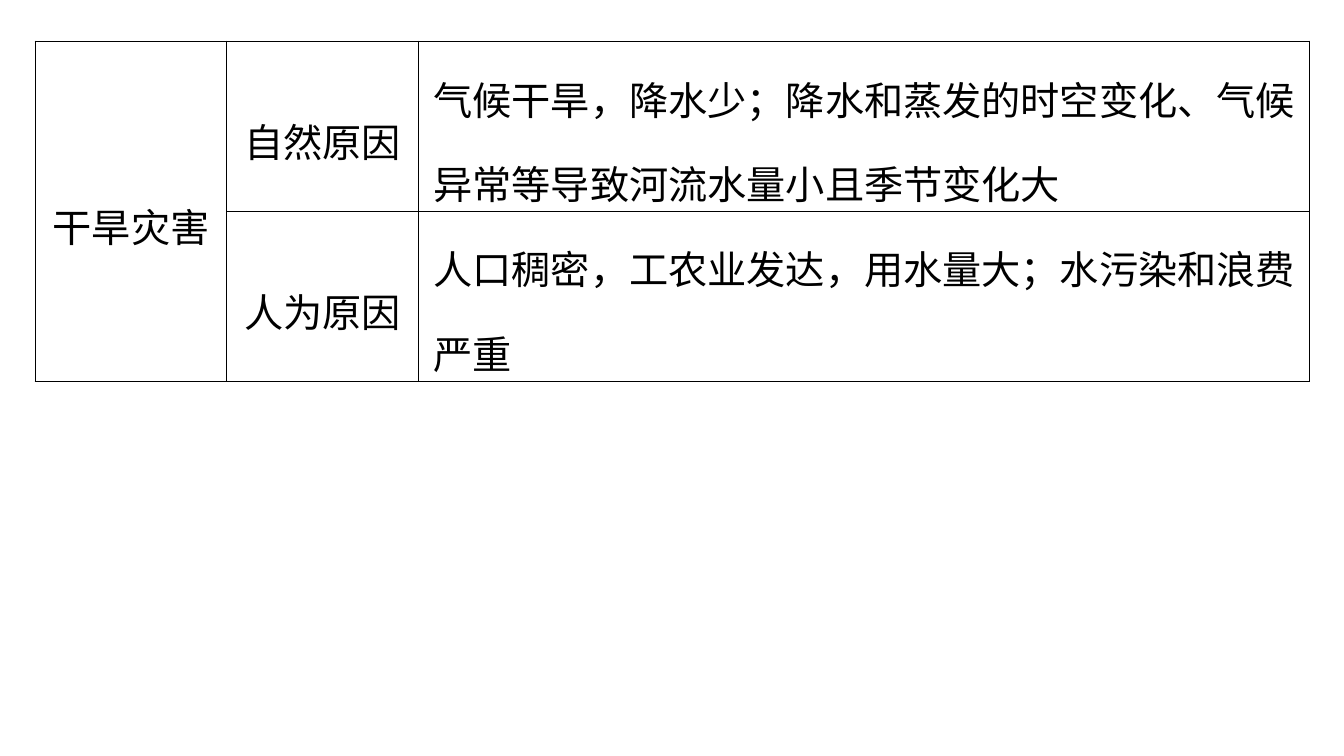
from lxml.etree import SubElement
from pptx import Presentation
from pptx.dml.color import RGBColor
from pptx.enum.text import MSO_ANCHOR, PP_ALIGN
from pptx.oxml.ns import qn
from pptx.util import Inches, Pt

# Content
CAUSES = [
    ("干旱灾害", "自然原因", "气候干旱，降水少；降水和蒸发的时空变化、气候异常等导致河流水量小且季节变化大"),
    ("", "人为原因", "人口稠密，工农业发达，用水量大；水污染和浪费严重"),
]
COLUMN_WIDTHS = [1.9, 1.9, 8.84]
ROW_HEIGHT = 1.67
LEFT, TOP = 0.35, 0.41
BLACK = "000000"


def color(hex_string):
    return RGBColor.from_string(hex_string)


def add_borders(cell):
    properties = cell._tc.get_or_add_tcPr()
    for side in ("a:lnL", "a:lnR", "a:lnT", "a:lnB"):
        line = SubElement(properties, qn(side), w=str(Pt(1)))
        fill = SubElement(line, qn("a:solidFill"))
        SubElement(fill, qn("a:srgbClr"), val=BLACK)


def format_cell(cell, text, is_label):
    add_borders(cell)
    cell.fill.background()
    cell.vertical_anchor = MSO_ANCHOR.MIDDLE
    cell.margin_left = cell.margin_right = Inches(0.07)
    cell.margin_top = cell.margin_bottom = 0
    cell.text = text
    paragraph = cell.text_frame.paragraphs[0]
    paragraph.line_spacing = 1.5
    paragraph.font.size = Pt(28)
    paragraph.font.name = "Times New Roman"
    paragraph.font.color.rgb = color(BLACK)
    if is_label:
        paragraph.alignment = PP_ALIGN.CENTER
    else:
        paragraph.alignment = PP_ALIGN.LEFT
        indents = paragraph._p.get_or_add_pPr()
        indents.set("marL", str(Inches(0.08)))
        indents.set("indent", "0")


# Slide
presentation = Presentation()
presentation.slide_width = Inches(13.33)
presentation.slide_height = Inches(7.5)
slide = presentation.slides.add_slide(presentation.slide_layouts[6])

# Table of drought causes
table = slide.shapes.add_table(
    len(CAUSES), len(COLUMN_WIDTHS), Inches(LEFT), Inches(TOP),
    Inches(sum(COLUMN_WIDTHS)), Inches(ROW_HEIGHT * len(CAUSES)),
).table
table.first_row = table.horz_banding = False
for column, width in zip(table.columns, COLUMN_WIDTHS):
    column.width = Inches(width)
for row, texts in zip(table.rows, CAUSES):
    row.height = Inches(ROW_HEIGHT)
    for index, text in enumerate(texts):
        format_cell(row.cells[index], text, is_label=index < 2)
table.cell(0, 0).merge(table.cell(1, 0))

presentation.save("out.pptx")
